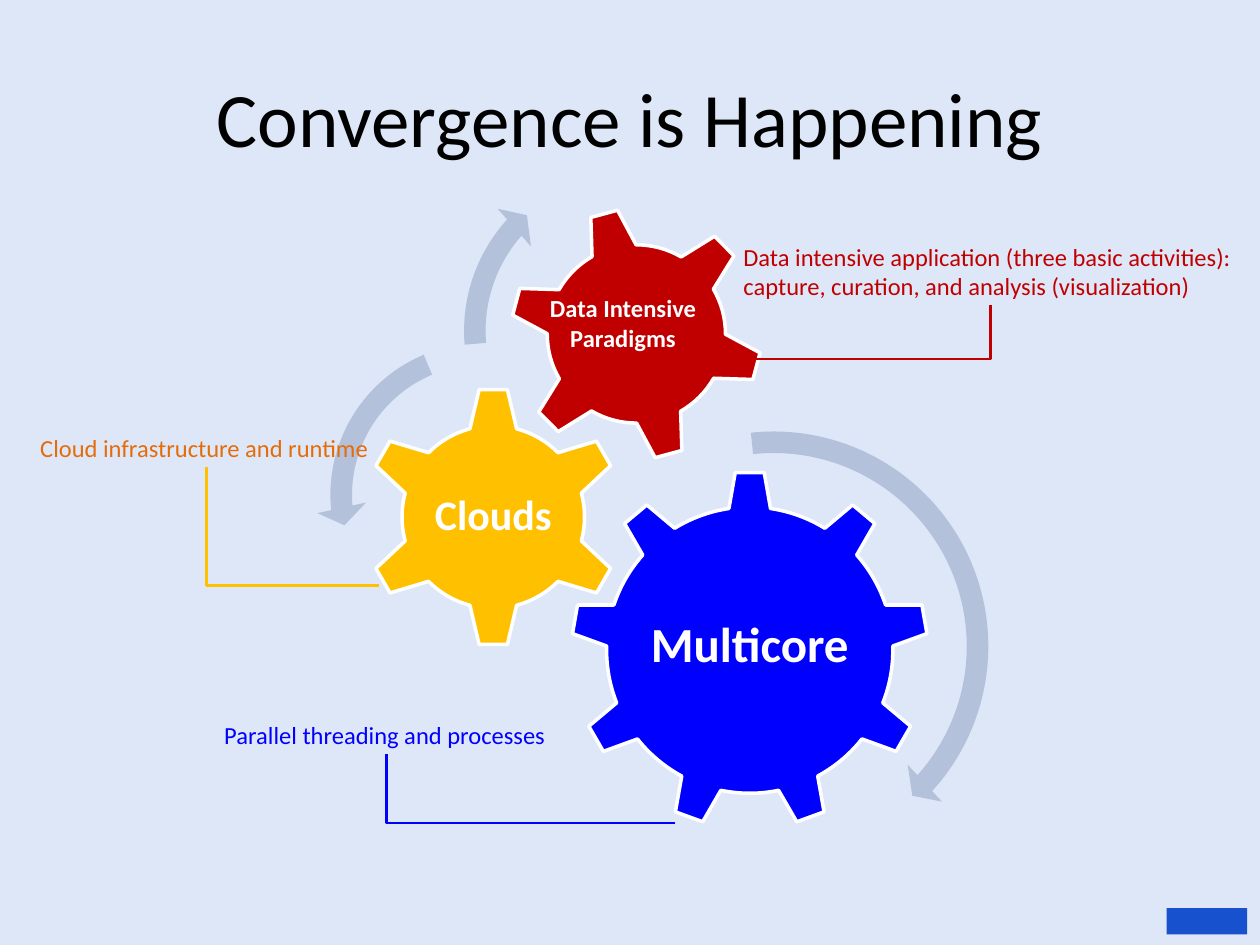
"""Build the slide "Convergence is Happening" with gears, arrows and callouts."""
from dataclasses import dataclass

from lxml import etree
from pptx import Presentation
from pptx.dml.color import RGBColor
from pptx.enum import shapes, text
from pptx.oxml import ns
from pptx.util import Pt

BACKGROUND = RGBColor(0xDE, 0xE7, 0xF8)
BLACK = RGBColor(0, 0, 0)
WHITE = RGBColor(0xFF, 0xFF, 0xFF)
BLUE = RGBColor(0, 0, 0xFF)
AMBER = RGBColor(0xFF, 0xC0, 0)
ORANGE = RGBColor(0xE4, 0x6C, 0x0A)
RED = RGBColor(0xC0, 0, 0)
PALE = RGBColor(0xB3, 0xC1, 0xDB)
BADGE = RGBColor(0x18, 0x51, 0xCE)
FONT = "Calibri"
KIND = shapes.MSO_SHAPE
ALIGN = text.PP_ALIGN


@dataclass
class Gear:
    kind: shapes.MSO_SHAPE
    left: float
    top: float
    size: float
    color: RGBColor
    label: str = ""
    font_size: float = 14
    rotation: float = 0


@dataclass
class Arrow:
    kind: shapes.MSO_SHAPE
    left: float
    top: float
    size: float
    adjustments: tuple


@dataclass
class Label:
    left: float
    top: float
    width: float
    height: float
    lines: tuple
    color: RGBColor
    align: text.PP_ALIGN = ALIGN.LEFT
    bold: bool = False


@dataclass
class Elbow:
    begin: tuple
    end: tuple
    color: RGBColor


GEARS = [
    Gear(KIND.GEAR_9, 326.2, 269.3, 204.5, BLUE, "Multicore", 28),
    Gear(KIND.GEAR_6, 207.4, 221, 149, AMBER, "Clouds", 24),
    Gear(KIND.GEAR_6, 290.9, 118.1, 145.5, RED, rotation=345),
]
ARROWS = [
    Arrow(KIND.CIRCULAR_ARROW, 311, 238.3, 262, (0.047, 2.99, 25.275, 158.37, 0.055)),
    Arrow(KIND.LEFT_CIRCULAR_ARROW, 180.7, 187.9, 190, (0.065, 4.3, 104.891, 148.378, 0.075)),
    Arrow(KIND.CIRCULAR_ARROW, 257, 86.4, 205.2, (0.06, 3.941, 133.138, 105.082, 0.07)),
]
LABELS = [
    Label(308.9, 164.9, 94.3, 38.9, ("Data Intensive", "Paradigms"), WHITE, ALIGN.CENTER, True),
    Label(419.8, 135.4, 292.3, 38.9,
          ("Data intensive application (three basic activities):",
           "capture, curation, and analysis (visualization)"), RED),
    Label(18, 244.8, 199.4, 22.3, ("Cloud infrastructure and runtime",), ORANGE),
    Label(123.1, 409, 195.8, 22.3, ("Parallel threading and processes",), BLUE),
]
ELBOWS = [
    Elbow((393.8, 205.2), (565.9, 174.2), RED),
    Elbow((216.7, 334.8), (118.1, 267.1), AMBER),
    Elbow((385.9, 470.2), (221, 430.6), BLUE),
]


def format_font(font, color: RGBColor, **values) -> None:
    """Apply the slide font, a colour and further values to a font."""
    for name, value in {"name": FONT, **values}.items():
        setattr(font, name, value)
    font.color.rgb = color


def add_filled(s, kind, left: float, top: float, width: float, height: float, color: RGBColor):
    """Add a preset shape with a plain fill and no line."""
    sp = s.shapes.add_shape(kind, Pt(left), Pt(top), Pt(width), Pt(height))
    sp.shadow.inherit = False
    sp.fill.solid()
    sp.fill.fore_color.rgb = color
    sp.line.fill.background()
    return sp


def add_gear(s, gear: Gear) -> None:
    """Add a white-edged gear with its label, if any."""
    sp = add_filled(s, gear.kind, gear.left, gear.top, gear.size, gear.size, gear.color)
    sp.rotation = gear.rotation
    sp.line.color.rgb = WHITE
    sp.line.width = Pt(2)
    if gear.label:
        tf = sp.text_frame
        values = dict(word_wrap=False, vertical_anchor=text.MSO_ANCHOR.MIDDLE,
                      margin_left=0, margin_right=0, margin_top=0, margin_bottom=0)
        for name, value in values.items():
            setattr(tf, name, value)
        p = tf.paragraphs[0]
        p.alignment = ALIGN.CENTER
        p.line_spacing = 0.9
        r = p.add_run()
        r.text = gear.label
        format_font(r.font, WHITE, size=Pt(gear.font_size), bold=True)


def add_arrow(s, arrow: Arrow) -> None:
    """Add a curved arrow around a gear."""
    sp = add_filled(s, arrow.kind, arrow.left, arrow.top, arrow.size, arrow.size, PALE)
    for i, value in enumerate(arrow.adjustments):
        sp.adjustments[i] = value


def add_label(s, label: Label) -> None:
    """Add a text box with one paragraph per line."""
    sp = s.shapes.add_textbox(Pt(label.left), Pt(label.top), Pt(label.width), Pt(label.height))
    tf = sp.text_frame
    values = dict(word_wrap=False, margin_left=Pt(5), margin_right=Pt(5),
                  margin_top=Pt(2.7), margin_bottom=Pt(2.7))
    for name, value in values.items():
        setattr(tf, name, value)
    for i, line in enumerate(label.lines):
        p = tf.add_paragraph() if i else tf.paragraphs[0]
        p.alignment = label.align
        r = p.add_run()
        r.text = line
        format_font(r.font, label.color, size=Pt(14), bold=label.bold)


def add_elbow(s, elbow: Elbow) -> None:
    """Add a connector with a single bend."""
    points = [Pt(v) for v in (*elbow.begin, *elbow.end)]
    c = s.shapes.add_connector(shapes.MSO_CONNECTOR.ELBOW, *points)
    c.line.color.rgb = elbow.color
    c.line.width = Pt(1.5)
    props = c._element.spPr
    props.find(ns.qn("a:prstGeom")).set("prst", "bentConnector2")
    etree.SubElement(props, ns.qn("a:effectLst"))


def main() -> None:
    """Build and save the presentation."""
    prs = Presentation()
    prs.slide_width, prs.slide_height = Pt(720), Pt(540)
    s = prs.slides.add_slide(prs.slide_layouts[5])
    s.background.fill.solid()
    s.background.fill.fore_color.rgb = BACKGROUND

    title = s.shapes.title
    box = dict(left=Pt(36), top=Pt(21.6), width=Pt(648), height=Pt(90))
    for name, value in box.items():
        setattr(title, name, value)
    title.text_frame.vertical_anchor = text.MSO_ANCHOR.MIDDLE
    p = title.text_frame.paragraphs[0]
    p.alignment = ALIGN.CENTER
    r = p.add_run()
    r.text = "Convergence is Happening"
    format_font(r.font, BLACK, size=Pt(44))

    add_filled(s, KIND.RECTANGLE, 666.7, 519, 46, 15, BADGE)
    for items, draw in ((GEARS, add_gear), (ARROWS, add_arrow),
                        (LABELS, add_label), (ELBOWS, add_elbow)):
        for item in items:
            draw(s, item)
    prs.save("out.pptx")


if __name__ == "__main__":
    main()
